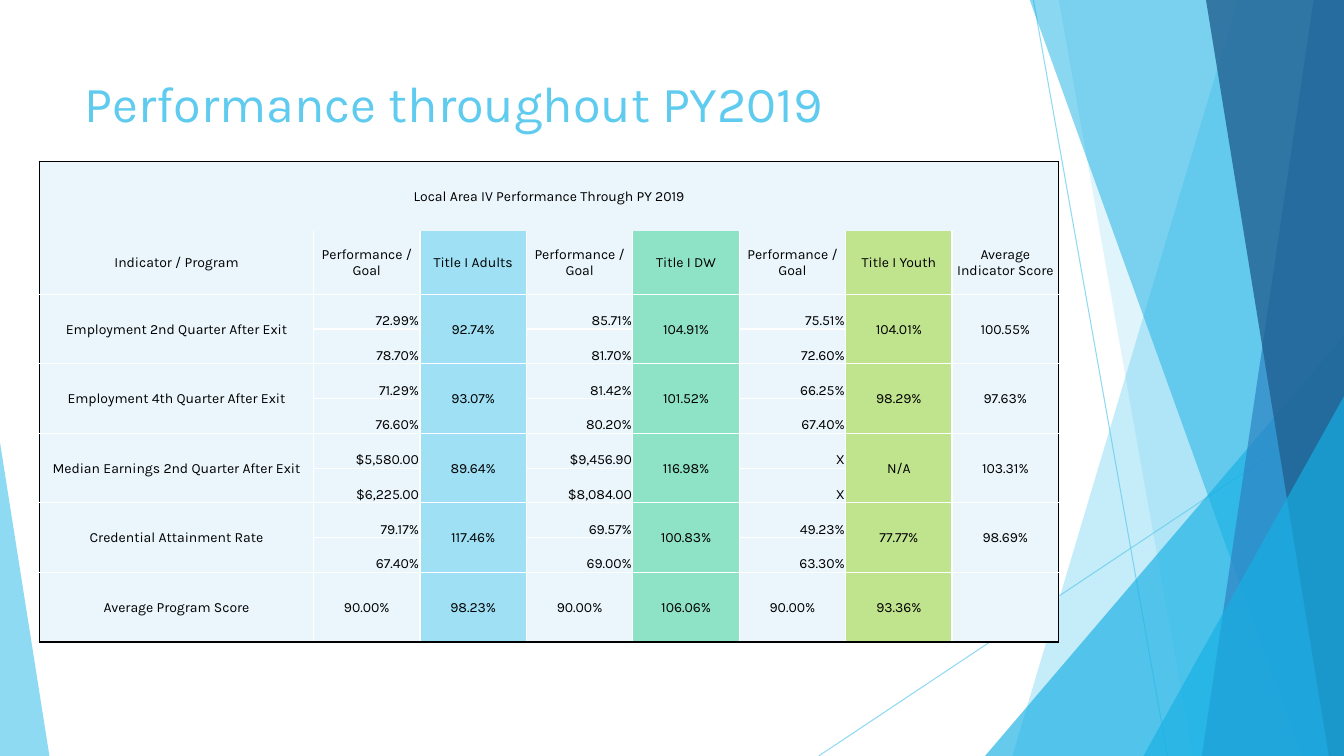
import pptx
import pptx.util
import pptx.oxml
import pptx.oxml.ns
from dataclasses import dataclass
from pptx.dml.color import RGBColor
from pptx.enum.shapes import MSO_CONNECTOR, MSO_SHAPE
from pptx.enum.text import MSO_ANCHOR, MSO_AUTO_SIZE, PP_ALIGN
from pptx.util import Inches


@dataclass(frozen=True)
class Theme:
    font: str = "Karla"
    title_size: int = 36
    table_size: int = 10
    sky: str = "5FCBEF"
    cyan: str = "17B0E4"
    blue: str = "2E83C3"
    navy: str = "226292"
    pale: str = "EAF6FC"
    adults: str = "9FE0F5"
    workers: str = "8EE3C7"
    youth: str = "C0E38D"
    black: str = "000000"
    white: str = "FFFFFF"


theme = Theme()


def paint(fill, shape, color, opacity):
    """Fill with a solid colour at the given opacity in percent."""
    fill.solid()
    fill.fore_color.rgb = RGBColor.from_string(color)
    rgb = shape.element.find(".//" + pptx.oxml.ns.qn("a:srgbClr"))
    alpha = rgb.makeelement(pptx.oxml.ns.qn("a:alpha"), {"val": str(opacity * 1000)})
    rgb.append(alpha)


def set_border(cell, side, color):
    """Draw one side (L, R, T or B) of a cell, or leave it bare if color is None."""
    paint_xml = f'<a:solidFill><a:srgbClr val="{color}"/></a:solidFill>' if color else "<a:noFill/>"
    line = pptx.oxml.parse_xml(
        f'<a:ln{side} {pptx.oxml.ns.nsdecls("a")} w="12700">{paint_xml}</a:ln{side}>')
    properties = cell._tc.get_or_add_tcPr()
    properties.insert("LRTB".index(side), line)


deck = pptx.Presentation()
deck.slide_width = Inches(13.33)
deck.slide_height = Inches(7.5)
page = deck.slides.add_slide(deck.slide_layouts[5])

# Background facets, from back to front
for start, end in [((10.25, 0), (11.58, 7.5)), ((13.33, 4.03), (8.12, 7.5))]:
    ray = page.shapes.add_connector(
        MSO_CONNECTOR.STRAIGHT, *[Inches(value) for value in start + end])
    ray.line.width = pptx.util.Pt(0.75)
    paint(ray.line.fill, ray, theme.sky, 70)
    properties = ray.element.spPr
    properties.append(properties.makeelement(pptx.oxml.ns.qn("a:effectLst"), {}))

# A band gives its top-left and bottom-left x; a triangle its box and apex
facets = [
    ("band", (12.28, 10.04), theme.sky, 36),
    ("band", (10.5, 11.83), theme.sky, 20),
    ("triangle", (9.77, 3.33, 3.56, 4.17, 1), theme.cyan, 66),
    ("band", (10.21, 12.91), theme.cyan, 50),
    ("band", (13.03, 11.92), theme.blue, 70),
    ("band", (11.96, 13.18), theme.navy, 80),
    ("triangle", (11.34, 3.93, 1.99, 3.57, 1), theme.cyan, 66),
    ("triangle", (0, 4.39, 0.49, 3.11, 0), theme.sky, 70),
]
for kind, geometry, color, opacity in facets:
    if kind == "band":
        top_x, bottom_x = geometry
        corners = [(Inches(x), Inches(y)) for x, y in
                   [(top_x, -0.01), (13.33, -0.01), (13.33, 7.5), (bottom_x, 7.5)]]
        builder = page.shapes.build_freeform(*corners[0])
        builder.add_line_segments(corners[1:], close=True)
        facet = builder.convert_to_shape()
    else:
        *bounds, apex = geometry
        facet = page.shapes.add_shape(
            MSO_SHAPE.ISOSCELES_TRIANGLE, *[Inches(value) for value in bounds])
        facet.adjustments[0] = apex
    paint(facet.fill, facet, color, opacity)
    facet.line.fill.background()
    facet.shadow.inherit = False

# Title, in front of the facets
title = page.shapes.title
title.element.getparent().append(title.element)
title.left, title.top = Inches(0.74), Inches(0.67)
title.width, title.height = Inches(9.4), Inches(1.44)
frame = title.text_frame
frame.text = "Performance throughout PY2019"
frame.word_wrap = True
frame.auto_size = MSO_AUTO_SIZE.NONE
frame.vertical_anchor = MSO_ANCHOR.TOP
frame.paragraphs[0].alignment = PP_ALIGN.LEFT
span = frame.paragraphs[0].runs[0]
span.font.name = theme.font
span.font.size = pptx.util.Pt(theme.title_size)
span.font.color.rgb = RGBColor.from_string(theme.sky)

# Performance table: each indicator takes two rows, performance above goal
goal = "Performance / Goal"
rows = [
    ["Local Area IV Performance Through PY 2019"] + [""] * 7,
    ["Indicator / Program", goal, "Title I Adults", goal, "Title I DW", goal,
     "Title I Youth", "Average Indicator Score"],
]
indicators = [
    ("Employment 2nd Quarter After Exit", ("72.99%", "78.70%"), "92.74%",
     ("85.71%", "81.70%"), "104.91%", ("75.51%", "72.60%"), "104.01%", "100.55%"),
    ("Employment 4th Quarter After Exit", ("71.29%", "76.60%"), "93.07%",
     ("81.42%", "80.20%"), "101.52%", ("66.25%", "67.40%"), "98.29%", "97.63%"),
    ("Median Earnings 2nd Quarter After Exit", ("$5,580.00", "$6,225.00"), "89.64%",
     ("$9,456.90", "$8,084.00"), "116.98%", ("X", "X"), "N/A", "103.31%"),
    ("Credential Attainment Rate", ("79.17%", "67.40%"), "117.46%",
     ("69.57%", "69.00%"), "100.83%", ("49.23%", "63.30%"), "77.77%", "98.69%"),
]
for indicator in indicators:
    pairs = [entry if isinstance(entry, tuple) else (entry, "") for entry in indicator]
    rows += [list(half) for half in zip(*pairs)]
rows.append(["Average Program Score", "90.00%", "98.23%", "90.00%", "106.06%",
             "90.00%", "93.36%", ""])
column_fills = [theme.pale, theme.pale, theme.adults, theme.pale, theme.workers,
                theme.pale, theme.youth, theme.pale]
last_row, last_column = len(rows) - 1, len(column_fills) - 1

table = page.shapes.add_table(len(rows), len(column_fills), Inches(0.39), Inches(1.6),
                              Inches(10.11), Inches(4.78)).table
table.first_row = False
table.horz_banding = False
label_width = Inches(2.72)
for index, column in enumerate(table.columns):
    column.width = label_width if index == 0 else (Inches(10.11) - label_width) // last_column
for index, row in enumerate(table.rows):
    row.height = Inches(0.63) if index == 1 else Inches(0.69)
    if 1 < index < last_row:
        row.height = Inches(0.69) // 2

table.cell(0, 0).merge(table.cell(0, last_column))
for top in range(2, last_row, 2):
    for column in (0, 2, 4, 6, 7):
        table.cell(top, column).merge(table.cell(top + 1, column))

for r, values in enumerate(rows):
    for c, value in enumerate(values):
        cell = table.cell(r, c)
        inner = None if r == 0 else theme.white
        set_border(cell, "L", theme.black if c == 0 else inner)
        set_border(cell, "R", theme.black if c == last_column or r == 0 and c == 0 else inner)
        set_border(cell, "T", theme.black if r == 0 else None if r == 1 else theme.white)
        set_border(cell, "B", theme.black if r == last_row else inner)
        cell.fill.solid()
        cell.fill.fore_color.rgb = RGBColor.from_string(theme.pale if r == 0 else column_fills[c])
        cell.margin_left = cell.margin_right = cell.margin_top = Inches(0.01)
        cell.margin_bottom = 0
        in_pair = c in (1, 3, 5) and 1 < r < last_row
        cell.vertical_anchor = MSO_ANCHOR.BOTTOM if in_pair else MSO_ANCHOR.MIDDLE
        if not value:
            continue
        cell.text_frame.text = value
        para = cell.text_frame.paragraphs[0]
        para.alignment = PP_ALIGN.RIGHT if in_pair else PP_ALIGN.CENTER
        span = para.runs[0]
        span.font.name = theme.font
        span.font.size = pptx.util.Pt(theme.table_size)
        span.font.color.rgb = RGBColor.from_string(theme.black)

deck.save("out.pptx")
